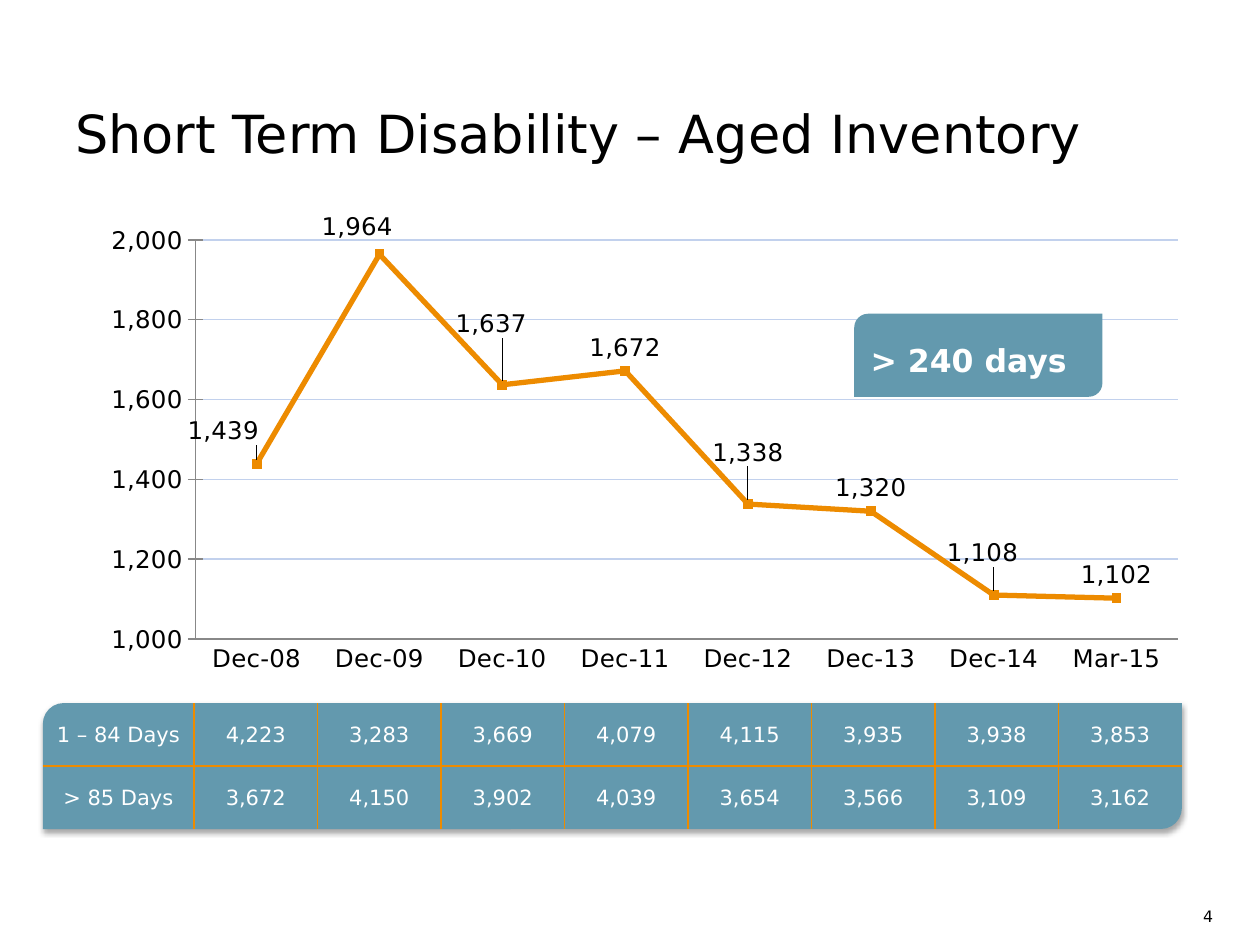
from lxml import etree
from pptx import Presentation
from pptx.chart.data import CategoryChartData
from pptx.dml.color import RGBColor
from pptx.enum.chart import XL_CHART_TYPE, XL_LABEL_POSITION, XL_TICK_MARK
from pptx.enum.shapes import MSO_SHAPE
from pptx.enum.text import MSO_ANCHOR, PP_ALIGN
from pptx.oxml import parse_xml
from pptx.oxml.ns import nsdecls, qn
from pptx.util import Inches, Pt

FONT = "DejaVu Sans"
BLACK, WHITE, TEAL, ORANGE = "000000", "FFFFFF", "6399AE", "ED8B00"
GRID, AXIS = "C2D1ED", "888888"

# Content
TITLE = "Short Term Disability – Aged Inventory"
CALLOUT = "> 240 days"
PAGE_NUMBER = "4"
INVENTORY = [("Dec-08", 1439), ("Dec-09", 1964), ("Dec-10", 1637), ("Dec-11", 1672),
             ("Dec-12", 1338), ("Dec-13", 1320), ("Dec-14", 1110), ("Mar-15", 1102)]
# Point index: label shift as shares of the chart's width and height
LABEL_SHIFTS = {0: (-0.03, -0.02), 1: (-0.02, -0.01), 2: (-0.01, -0.08),
                4: (0, -0.06), 6: (-0.01, -0.04)}
LABEL_TEXTS = {6: "1,108"}
AGE_ROWS = [
    ("1 – 84 Days", "4,223", "3,283", "3,669", "4,079", "4,115", "3,935", "3,938", "3,853"),
    ("> 85 Days", "3,672", "4,150", "3,902", "4,039", "3,654", "3,566", "3,109", "3,162"),
]

# Layout in inches: left, top, width, height
CHART = (0.71, 1.68, 8.81, 3.74)
PLOT = (1.55, 1.88, 7.8, 3.19)
TABLE = (0.34, 5.58, 9.04, 1)
FIRST_COLUMN = 1.2


def color(value):
    return RGBColor.from_string(value)


def set_font(font, size, fill=BLACK, bold=False):
    font.name, font.size, font.bold = FONT, Pt(size), bold
    font.color.rgb = color(fill)


def write(frame, text, size, fill=BLACK, bold=False, align=None, spacing=None,
          anchor=MSO_ANCHOR.TOP):
    frame.word_wrap = True
    frame.vertical_anchor = anchor
    para = frame.paragraphs[0]
    para.alignment, para.line_spacing = align, spacing
    span = para.add_run()
    span.text = text
    set_font(span.font, size, fill, bold)


def add_text(page, area, text, size, **style):
    box = page.shapes.add_textbox(*map(Inches, area))
    write(box.text_frame, text, size, **style)


def add_panel(page, area):
    panel = page.shapes.add_shape(MSO_SHAPE.ROUND_2_DIAG_RECTANGLE, *map(Inches, area))
    panel.fill.solid()
    panel.fill.fore_color.rgb = color(TEAL)
    panel.line.fill.background()
    panel.shadow.inherit = False
    return panel


def add_shadow(shape):
    effects = shape._element.spPr.find(qn("a:effectLst"))
    effects.append(parse_xml(
        f'<a:outerShdw {nsdecls("a")} blurRad="{Pt(3.1)}" dist="{Pt(1.8)}" dir="5400000" '
        f'rotWithShape="0"><a:srgbClr val="{BLACK}"><a:alpha val="35000"/></a:srgbClr>'
        '</a:outerShdw>'))


def manual_layout(**settings):
    layout = etree.Element(qn("c:layout"))
    manual = etree.SubElement(layout, qn("c:manualLayout"))
    for name, value in settings.items():
        etree.SubElement(manual, qn(f"c:{name}")).set("val", str(value))
    return layout


def style_line(line, fill, width):
    line.color.rgb = color(fill)
    line.width = Pt(width)


def add_inventory_chart(page):
    data = CategoryChartData(number_format="#,##0")
    data.categories = [month for month, _ in INVENTORY]
    data.add_series("Series 1", [value for _, value in INVENTORY])
    chart = page.shapes.add_chart(XL_CHART_TYPE.LINE, *map(Inches, CHART), data).chart
    chart.has_legend = chart.has_title = False
    set_font(chart.font, 14)

    # Fixed plot area
    left, top, width, height = CHART
    plot_xml = chart._chartSpace.chart.plotArea
    for old in plot_xml.findall(qn("c:layout")):
        plot_xml.remove(old)
    plot_xml.insert(0, manual_layout(
        layoutTarget="inner", xMode="edge", yMode="edge",
        x=(PLOT[0] - left) / width, y=(PLOT[1] - top) / height,
        w=PLOT[2] / width, h=PLOT[3] / height))

    # Axes
    months, counts = chart.category_axis, chart.value_axis
    months.major_tick_mark = XL_TICK_MARK.NONE
    counts.major_tick_mark = XL_TICK_MARK.CROSS
    counts.minimum_scale, counts.maximum_scale, counts.major_unit = 1000, 2000, 200
    counts.tick_labels.number_format = "#,##0"
    counts.tick_labels.number_format_is_linked = False
    style_line(counts.major_gridlines.format.line, GRID, 0.75)
    for axis in (months, counts):
        set_font(axis.tick_labels.font, 14)
        style_line(axis.format.line, AXIS, 0.75)

    # Line and its labels
    chart.plots[0].vary_by_categories = False
    series = chart.plots[0].series[0]
    series.smooth = False
    series.marker.style = None
    style_line(series.format.line, ORANGE, 3)
    labels = series.data_labels
    labels.show_value = True
    labels.position = XL_LABEL_POSITION.ABOVE
    labels.number_format, labels.number_format_is_linked = "#,##0", False
    set_font(labels.font, 14)
    for index, (x, y) in LABEL_SHIFTS.items():
        label = series.points[index].data_label
        if index in LABEL_TEXTS:
            write(label.text_frame, LABEL_TEXTS[index], 14)
        else:
            set_font(label.font, 14)
        label.position = XL_LABEL_POSITION.ABOVE
        for label_xml in series._element.iter(qn("c:dLbl")):
            if label_xml.find(qn("c:idx")).get("val") == str(index):
                label_xml.insert(1, manual_layout(x=x, y=y))


def set_border(cell, side, visible):
    line = etree.SubElement(cell._tc.get_or_add_tcPr(), qn(f"a:ln{side}"))
    line.set("w", str(Pt(1)))
    if visible:
        fill = etree.SubElement(line, qn("a:solidFill"))
        etree.SubElement(fill, qn("a:srgbClr")).set("val", ORANGE)
    else:
        etree.SubElement(line, qn("a:noFill"))


def add_age_table(page):
    rows, columns = len(AGE_ROWS), len(AGE_ROWS[0])
    table = page.shapes.add_table(rows, columns, *map(Inches, TABLE)).table
    table.first_row = table.horz_banding = False
    for index, column in enumerate(table.columns):
        rest = (TABLE[2] - FIRST_COLUMN) / (columns - 1)
        column.width = Inches(rest if index else FIRST_COLUMN)
    for r, values in enumerate(AGE_ROWS):
        for c, value in enumerate(values):
            cell = table.cell(r, c)
            cell.margin_left = cell.margin_right = cell.margin_top = Inches(0.01)
            cell.margin_bottom = 0
            cell.vertical_anchor = MSO_ANCHOR.MIDDLE
            para = cell.text_frame.paragraphs[0]
            para.alignment = PP_ALIGN.CENTER
            span = para.add_run()
            span.text = value
            set_font(span.font, 12, WHITE)
            # Only the inner borders show
            inner = {"L": c > 0, "R": c < columns - 1, "T": r > 0, "B": r < rows - 1}
            for side, visible in inner.items():
                set_border(cell, side, visible)
            cell.fill.background()


def main():
    deck = Presentation()
    deck.slide_width, deck.slide_height = Inches(10), Inches(7.5)
    page = deck.slides.add_slide(deck.slide_layouts[6])

    add_inventory_chart(page)
    add_shadow(add_panel(page, TABLE))
    add_age_table(page)
    add_text(page, (0.5, 0.75, 9.07, 1.12), TITLE, 30)
    add_text(page, (9.45, 7.07, 0.51, 0.4), PAGE_NUMBER, 9, anchor=MSO_ANCHOR.MIDDLE)
    callout = add_panel(page, (6.78, 2.49, 1.97, 0.66))
    write(callout.text_frame, CALLOUT, 18, fill=WHITE, bold=True, align=PP_ALIGN.LEFT,
          spacing=1.25, anchor=MSO_ANCHOR.MIDDLE)

    deck.save("out.pptx")


if __name__ == "__main__":
    main()
